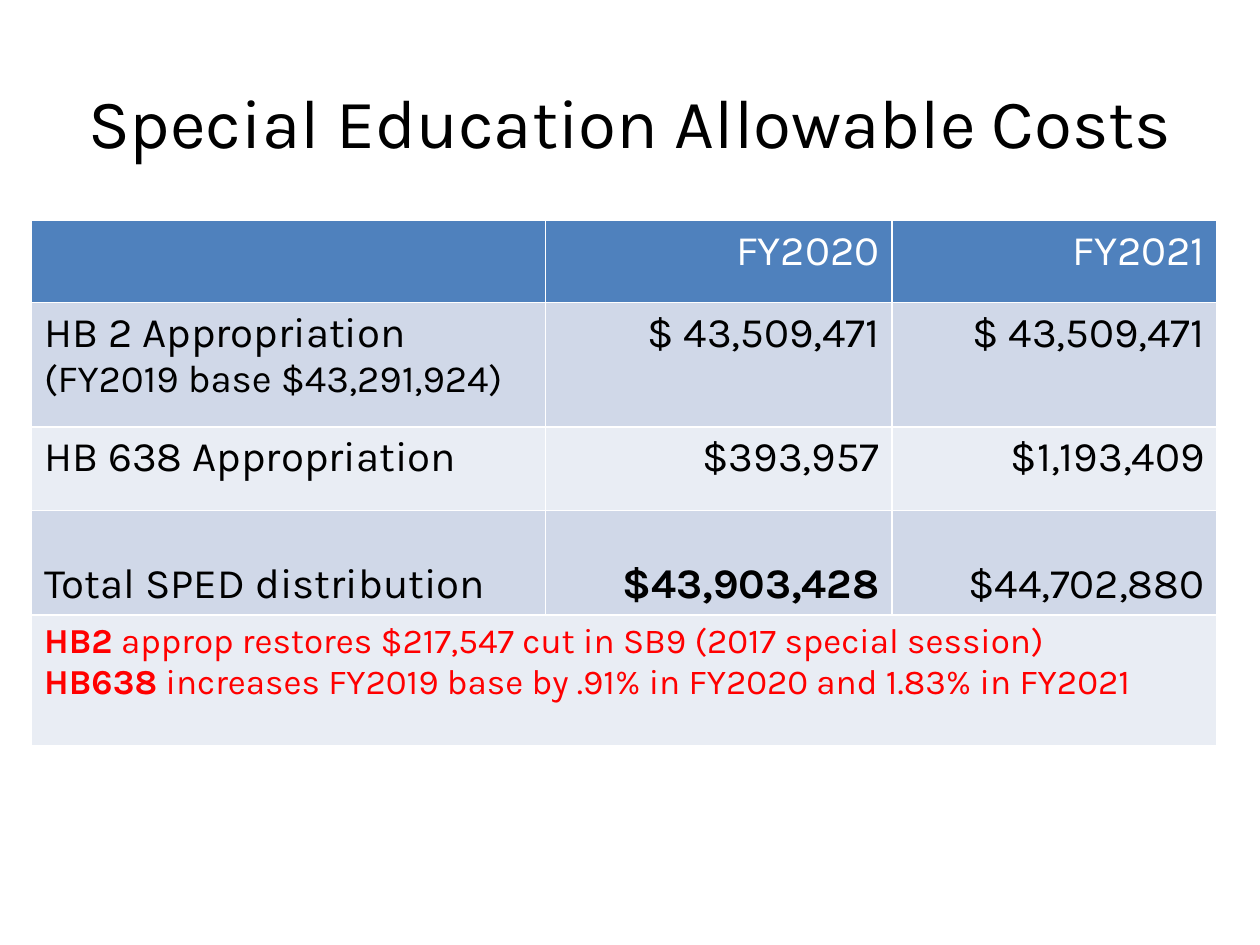
from pptx import Presentation
from pptx.dml.color import RGBColor
from pptx.enum.text import MSO_ANCHOR as Anchor, PP_ALIGN as Align
from pptx.util import Inches, Pt

BLACK = RGBColor(0x00, 0x00, 0x00)
WHITE = RGBColor(0xFF, 0xFF, 0xFF)
RED = RGBColor(0xFF, 0x00, 0x00)
HEADER_BLUE = RGBColor(0x4F, 0x81, 0xBD)
BAND_DARK = RGBColor(0xD0, 0xD8, 0xE8)
BAND_LIGHT = RGBColor(0xE9, 0xED, 0xF4)

COLUMNS = [4.08, 2.75, 2.58]
ROWS = [0.65, 0.99, 0.66, 0.83, 1.04]
COSTS = [
    ["", "FY2020", "FY2021"],
    ["HB 2 Appropriation\n(FY2019 base $43,291,924)", "$ 43,509,471", "$ 43,509,471"],
    ["HB 638 Appropriation", "$393,957", "$1,193,409"],
    ["Total SPED distribution", "$43,903,428", "$44,702,880"],
]
NOTES = [
    ("HB2", " approp restores $217,547 cut in SB9 (2017 special session)"),
    ("HB638", " increases FY2019 base by .91% in FY2020 and 1.83% in FY2021"),
]
TOTAL_ROW, NOTE_ROW = 3, 4


def style(para, size, color, align=Align.LEFT, bold=False):
    para.alignment = align
    font = para.font
    font.name, font.size, font.bold = "Karla", Pt(size), bold
    font.color.rgb = color


deck = Presentation()
deck.slide_width, deck.slide_height = Inches(10), Inches(7.5)
page = deck.slides.add_slide(deck.slide_layouts[6])

# Title
title = page.shapes.add_textbox(Inches(0.5), Inches(0.33), Inches(9), Inches(1.25))
frame = title.text_frame
frame.word_wrap = True
frame.vertical_anchor = Anchor.MIDDLE
frame.text = "Special Education Allowable Costs"
style(frame.paragraphs[0], 39.6, BLACK, Align.CENTER)

# Table grid; the default table style supplies the white rules
table = page.shapes.add_table(
    len(ROWS), len(COLUMNS), Inches(0.25), Inches(1.75),
    Inches(sum(COLUMNS)), Inches(sum(ROWS))).table
for column, width in zip(table.columns, COLUMNS):
    column.width = Inches(width)
for row, height in zip(table.rows, ROWS):
    row.height = Inches(height)

# Row colours: header, then alternating bands
for r, row in enumerate(table.rows):
    for cell in row.cells:
        cell.fill.solid()
        cell.fill.fore_color.rgb = (
            HEADER_BLUE if r == 0 else BAND_DARK if r % 2 else BAND_LIGHT)

# Cost figures
for r, values in enumerate(COSTS):
    for c, value in enumerate(values):
        cell = table.cell(r, c)
        cell.text = value
        if r == TOTAL_ROW:
            cell.vertical_anchor = Anchor.BOTTOM
        for line, para in enumerate(cell.text_frame.paragraphs):
            style(para, 22 if line else 24, BLACK if r else WHITE,
                  Align.RIGHT if c else Align.LEFT)
            for span in para.runs:
                span.font.bold = (r, c) == (TOTAL_ROW, 1)
                span.font.color.rgb = BLACK if r else WHITE

# Notes across the full width
note = table.cell(NOTE_ROW, 0)
note.merge(table.cell(NOTE_ROW, len(COLUMNS) - 1))
frame = note.text_frame
for line, (bill, effect) in enumerate(NOTES):
    para = frame.add_paragraph() if line else frame.paragraphs[0]
    style(para, 20, RED)
    for text, bold in ((bill, True), (effect, False)):
        span = para.add_run()
        span.text = text
        span.font.bold = bold
        span.font.color.rgb = RED

deck.save("out.pptx")
